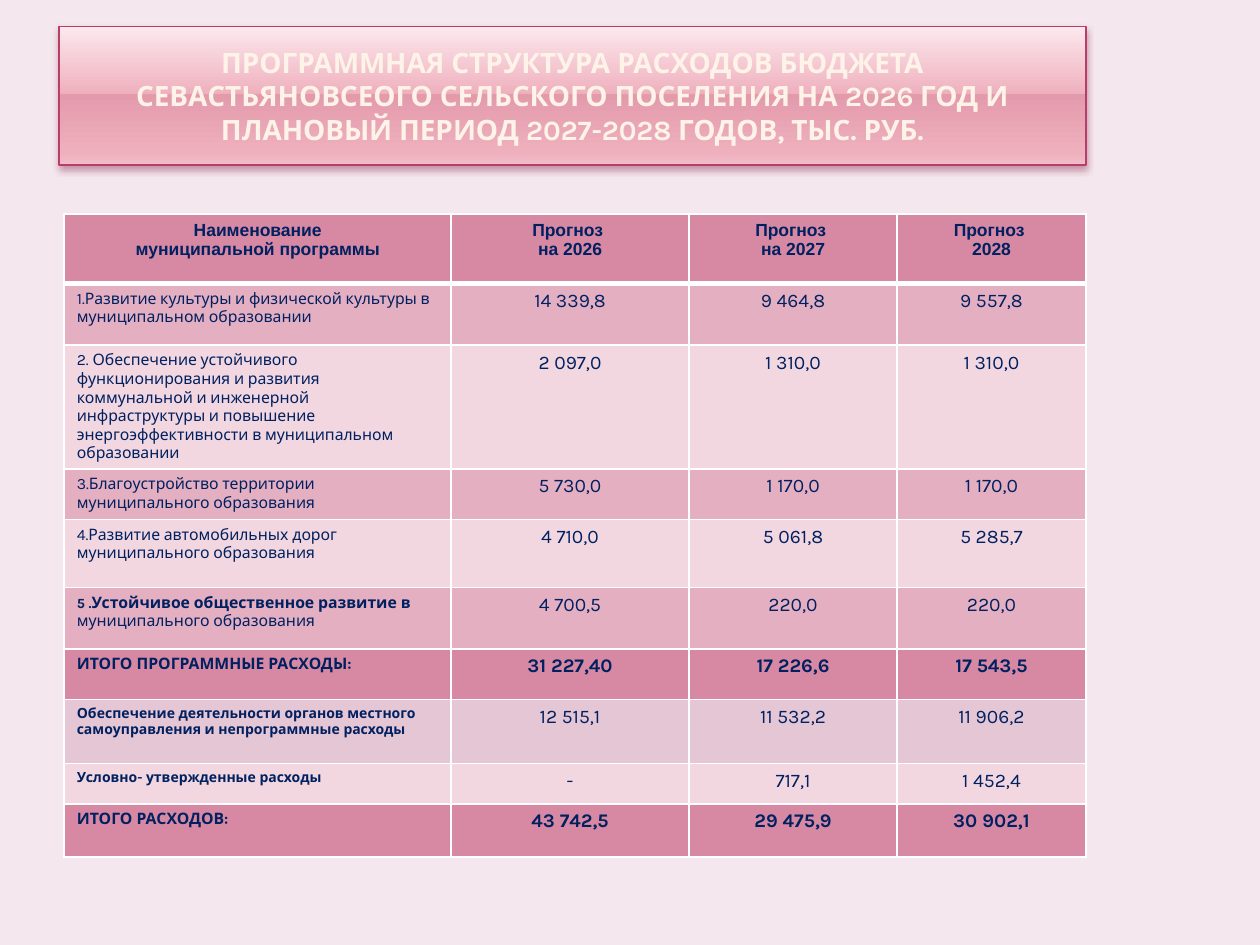
from dataclasses import dataclass

from lxml.etree import SubElement
from pptx import Presentation
from pptx.dml.color import RGBColor
from pptx.enum.text import MSO_ANCHOR as Anchor, MSO_AUTO_SIZE as AutoSize, PP_ALIGN as Align
from pptx.oxml.ns import qn
from pptx.util import Inches, Pt

COLORS = {
    "page": "F4E7ED", "navy": "002060", "cream": "FEF3E8", "border": "FFFFFF",
    "rose": "D788A3", "pink": "E5AFC2", "pale": "F2D7E0", "lilac": "E5C6D5",
    "frame": "B83D68", "shadow": "7F1238",
}
# Gloss of the title plate: position in percent, colour
GLOSS = [(0, "FCE8ED"), (49, "EFB0BE"), (49, "E39BAC"), (92, "EFB0BE"), (100, "F0BEC9")]
TITLE = ("ПРОГРАММНАЯ СТРУКТУРА РАСХОДОВ БЮДЖЕТА СЕВАСТЬЯНОВСЕОГО СЕЛЬСКОГО "
         "ПОСЕЛЕНИЯ НА 2026 ГОД И ПЛАНОВЫЙ ПЕРИОД 2027-2028 ГОДОВ, ТЫС. РУБ.")
COLUMN_WIDTHS = [3.07, 1.89, 1.65, 1.5]
HEADER_HEIGHT = 0.55
HEADERS = [("Наименование", "муниципальной программы"), ("Прогноз ", "на 2026"),
           ("Прогноз ", "на 2027"), ("Прогноз ", "2028")]


@dataclass
class Span:
    text: str
    size: float = 9
    bold: bool = False
    font: str = "Karla"


@dataclass
class BudgetRow:
    name: list[Span]
    amounts: list[str]
    height: float
    fill: str
    total: bool = False


ROWS = [
    BudgetRow([Span("1.Развитие культуры и физической культуры в муниципальном образовании")],
              ["14 339,8", "9 464,8", "9 557,8"], 0.49, "pink"),
    BudgetRow([Span("2. Обеспечение устойчивого функционирования и развития коммунальной и "
                    "инженерной инфраструктуры и повышение энергоэффективности в "
                    "муниципальном образовании")],
              ["2 097,0", "1 310,0", "1 310,0"], 0.98, "pale"),
    BudgetRow([Span("3.Благоустройство территории муниципального образования")],
              ["5 730,0", "1 170,0", "1 170,0"], 0.4, "pink"),
    BudgetRow([Span("4.Развитие автомобильных дорог муниципального образования")],
              ["4 710,0", "5 061,8", "5 285,7"], 0.54, "pale"),
    BudgetRow([Span("5 .", 8, True), Span("Устойчивое общественное развитие в ", 9, True),
               Span("муниципального образования")],
              ["4 700,5", "220,0", "220,0"], 0.49, "pink"),
    BudgetRow([Span("ИТОГО ПРОГРАММНЫЕ РАСХОДЫ:", 9, True)],
              ["31 227,40", "17 226,6", "17 543,5"], 0.4, "rose", True),
    BudgetRow([Span("Обеспечение деятельности органов местного самоуправления и "
                    "непрограммные расходы", 8, True)],
              ["12 515,1", "11 532,2", "11 906,2"], 0.51, "lilac"),
    BudgetRow([Span("Условно- утвержденные расходы", 8, True)],
              ["-", "717,1", "1 452,4"], 0.32, "pale"),
    BudgetRow([Span("ИТОГО РАСХОДОВ:", 9, True)],
              ["43 742,5", "29 475,9", "30 902,1"], 0.42, "rose", True),
]


def rgb(name: str) -> RGBColor:
    return RGBColor.from_string(COLORS[name])


def add_spans(para, spans: list[Span], color: str, align=Align.LEFT) -> None:
    para.alignment = align
    for item in spans:
        span = para.add_run()
        span.text = item.text
        span.font.size = Pt(item.size)
        span.font.bold = item.bold
        span.font.name = item.font
        span.font.color.rgb = rgb(color)


def add_color(parent, value: str):
    return SubElement(parent, qn("a:srgbClr"), val=value)


def set_borders(cell, bottom: float = 1, top: float = 1) -> None:
    props = cell._tc.get_or_add_tcPr()
    for place, (side, width) in enumerate(
            [("lnL", 1), ("lnR", 1), ("lnT", top), ("lnB", bottom)]):
        line = SubElement(props, qn(f"a:{side}"), w=str(Pt(width)))
        add_color(SubElement(line, qn("a:solidFill")), COLORS["border"])
        props.insert(place, line)


def fill_cell(cell, paragraphs: list[list[Span]], fill: str, align) -> None:
    cell.fill.solid()
    cell.fill.fore_color.rgb = rgb(fill)
    frame = cell.text_frame
    for index, spans in enumerate(paragraphs):
        para = frame.add_paragraph() if index else frame.paragraphs[0]
        add_spans(para, spans, "navy", align)


def add_title(page) -> None:
    box = page.shapes.title
    box.left, box.top, box.width, box.height = map(Inches, (0.47, 0.21, 8.15, 1.1))

    # Rounded plate with a glossy gradient
    props = box._element.spPr
    shape = SubElement(props, qn("a:prstGeom"), prst="roundRect")
    SubElement(shape, qn("a:avLst"))
    gradient = SubElement(props, qn("a:gradFill"), rotWithShape="1")
    stops = SubElement(gradient, qn("a:gsLst"))
    for position, value in GLOSS:
        add_color(SubElement(stops, qn("a:gs"), pos=str(position * 1000)), value)
    SubElement(gradient, qn("a:lin"), ang="5400000", scaled="0")
    box.line.color.rgb = rgb("frame")
    box.line.width = Pt(0.9)
    shadow = SubElement(SubElement(props, qn("a:effectLst")), qn("a:outerShdw"),
                        blurRad=str(Pt(4)), dist=str(Pt(2)), dir="5400000", rotWithShape="0")
    SubElement(add_color(shadow, COLORS["shadow"]), qn("a:alpha"), val="38000")

    frame = box.text_frame
    frame.word_wrap = True
    frame.auto_size = AutoSize.NONE
    frame.vertical_anchor = Anchor.MIDDLE
    add_spans(frame.paragraphs[0], [Span(TITLE, 16, True)], "cream", Align.CENTER)


def add_budget_table(page) -> None:
    heights = [HEADER_HEIGHT] + [row.height for row in ROWS]
    table = page.shapes.add_table(
        len(heights), len(COLUMN_WIDTHS), Inches(0.51), Inches(1.7),
        Inches(sum(COLUMN_WIDTHS)), Inches(sum(heights))).table
    for column, width in zip(table.columns, COLUMN_WIDTHS):
        column.width = Inches(width)
    for row, height in zip(table.rows, heights):
        row.height = Inches(height)

    # Header row, closed by a thick rule
    for column, lines in enumerate(HEADERS):
        cell = table.cell(0, column)
        paragraphs = [[Span(line, 10, True, "Arial")] for line in lines]
        fill_cell(cell, paragraphs, "rose", Align.CENTER)
        set_borders(cell, bottom=3)

    # Programme rows and totals
    for index, row in enumerate(ROWS, start=1):
        amounts = [[Span(amount, 11, row.total)] for amount in row.amounts]
        for column, spans in enumerate([row.name] + amounts):
            cell = table.cell(index, column)
            fill_cell(cell, [spans], row.fill, Align.CENTER if column else Align.LEFT)
            set_borders(cell, top=3 if index == 1 else 1)


def main() -> None:
    deck = Presentation()
    deck.slide_width, deck.slide_height = Inches(10), Inches(7.5)
    page = deck.slides.add_slide(deck.slide_layouts[5])
    page.background.fill.solid()
    page.background.fill.fore_color.rgb = rgb("page")
    add_title(page)
    add_budget_table(page)
    deck.save("out.pptx")


if __name__ == "__main__":
    main()
